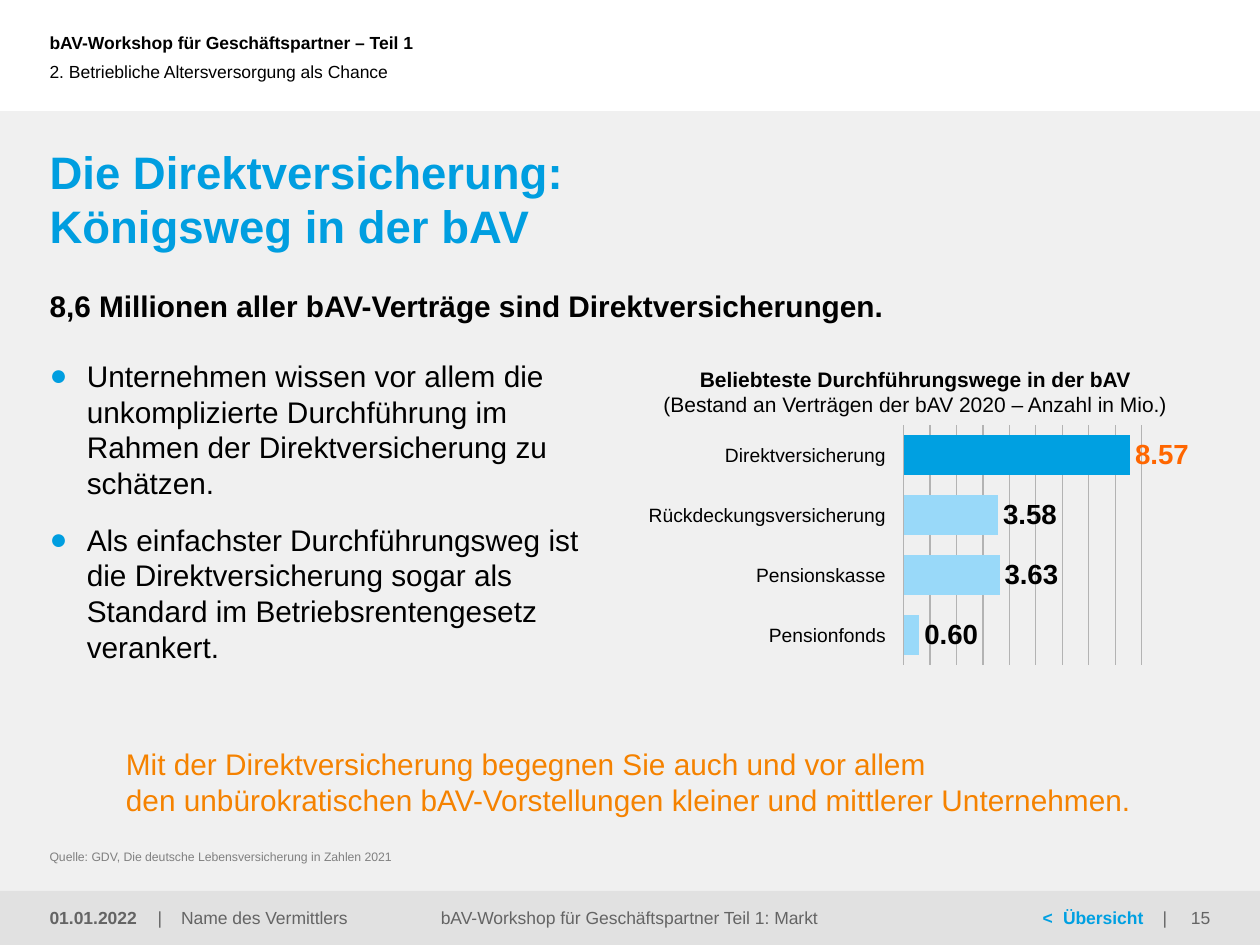
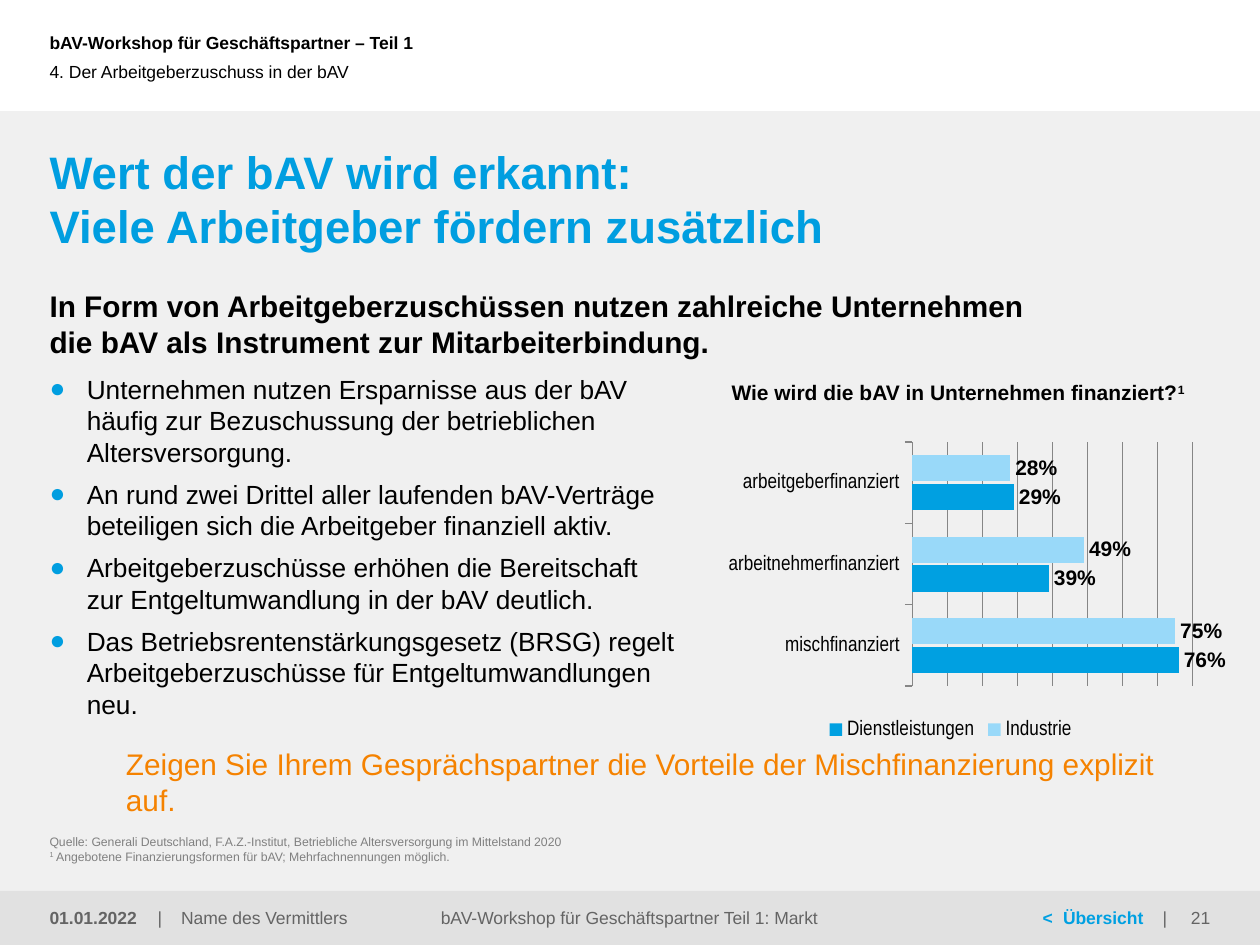
"""Builds two slides of a workshop on occupational pensions, each with bullets and a bar chart."""
from lxml import etree
from pptx import Presentation
from pptx.chart.data import CategoryChartData
from pptx.dml.color import RGBColor
from pptx.enum.chart import XL_CHART_TYPE, XL_LABEL_POSITION, XL_LEGEND_POSITION, XL_TICK_LABEL_POSITION, XL_TICK_MARK
from pptx.enum.shapes import MSO_SHAPE
from pptx.enum.text import MSO_ANCHOR, PP_ALIGN
from pptx.oxml.ns import qn
from pptx.util import Cm, Pt

BLACK = RGBColor(0x00, 0x00, 0x00)
TITLE_BLUE = RGBColor(0x00, 0x9E, 0xE0)
BLUE = RGBColor(0x00, 0xA0, 0xE1)
LIGHT_BLUE = RGBColor(0x99, 0xD9, 0xF9)
ORANGE = RGBColor(0xF5, 0x82, 0x00)
LABEL_ORANGE = RGBColor(0xFF, 0x66, 0x00)
BODY_GREY = RGBColor(0xF0, 0xF0, 0xF0)
FOOTER_GREY = RGBColor(0xE1, 0xE1, 0xE1)
TEXT_GREY = RGBColor(0x64, 0x64, 0x64)
SOURCE_GREY = RGBColor(0x80, 0x80, 0x80)
GRID_GREY = RGBColor(0xB3, 0xB3, 0xB3)
AXIS_GREY = RGBColor(0x86, 0x86, 0x86)

WIDTH, HEIGHT = 25.4, 19.05
MARGIN, CONTENT_W = 1, 23.4
BODY_TOP, FOOTER_TOP = 2.24, 17.96
FOOTER_H = HEIGHT - FOOTER_TOP

WORKSHOP = "bAV-Workshop für Geschäftspartner – Teil 1"
FOOTER = [
    ("01.01.2022", MARGIN, 2.5, {"bold": True}),
    ("|", 3.18, 0.4, {}),
    ("Name des Vermittlers", 3.65, 4, {}),
    ("bAV-Workshop für Geschäftspartner Teil 1: Markt", 7.67, 10.03, {"align": PP_ALIGN.CENTER}),
    ("<", 21.02, 0.4, {"bold": True, "color": BLUE}),
    ("Übersicht", 21.43, 2, {"bold": True, "color": BLUE}),
    ("|", 23.44, 0.4, {}),
]

SLIDES = [
    {
        "section": "2. Betriebliche Altersversorgung als Chance",
        "title": "Die Direktversicherung:\nKönigsweg in der bAV",
        "lead": "8,6 Millionen aller bAV-Verträge sind Direktversicherungen.",
        "bullets": [
            "Unternehmen wissen vor allem die unkomplizierte Durchführung im Rahmen der "
            "Direktversicherung zu schätzen.",
            "Als einfachster Durchführungsweg ist die Direktversicherung sogar als Standard im "
            "Betriebsrentengesetz verankert.",
        ],
        "bullet_box": (MARGIN, 7.21, 11.2, 7.6),
        "bullet_format": {"size": 17, "gap": 12},
        "callout": "Mit der Direktversicherung begegnen Sie auch und vor allem\n"
                   "den unbürokratischen bAV-Vorstellungen kleiner und mittlerer Unternehmen.",
        "source": ["Quelle: GDV, Die deutsche Lebensversicherung in Zahlen 2021"],
        "page": "15",
    },
    {
        "section": "4. Der Arbeitgeberzuschuss in der bAV",
        "title": "Wert der bAV wird erkannt:\nViele Arbeitgeber fördern zusätzlich",
        "lead": "In Form von Arbeitgeberzuschüssen nutzen zahlreiche Unternehmen\n"
                "die bAV als Instrument zur Mitarbeiterbindung.",
        "bullets": [
            "Unternehmen nutzen Ersparnisse aus der bAV häufig zur Bezuschussung der betrieblichen "
            "Altersversorgung.",
            "An rund zwei Drittel aller laufenden bAV-Verträge beteiligen sich die Arbeitgeber "
            "finanziell aktiv.",
            "Arbeitgeberzuschüsse erhöhen die Bereitschaft zur Entgeltumwandlung in der bAV deutlich.",
            "Das Betriebsrentenstärkungsgesetz (BRSG) regelt Arbeitgeberzuschüsse für "
            "Entgeltumwandlungen neu.",
        ],
        "bullet_box": (MARGIN, 7.52, 12.75, 7.3),
        "bullet_format": {"size": 15, "gap": 6},
        "callout": "Zeigen Sie Ihrem Gesprächspartner die Vorteile der Mischfinanzierung explizit auf.",
        "source": [
            "Quelle: Generali Deutschland, F.A.Z.-Institut, Betriebliche Altersversorgung im "
            "Mittelstand 2020\n",
            ("1", {"raised": True}),
            " Angebotene Finanzierungsformen für bAV; Mehrfachnennungen möglich.",
        ],
        "page": "21",
    },
]

CONTRACTS = {"Direktversicherung": 8.57, "Rückdeckungsversicherung": 3.58,
             "Pensionskasse": 3.63, "Pensionfonds": 0.60}
FINANCING = ["arbeitgeberfinanziert", "arbeitnehmerfinanziert", "mischfinanziert"]
SECTORS = [("Industrie", (0.28, 0.49, 0.75), LIGHT_BLUE),
           ("Dienstleistungen", (0.29, 0.39, 0.76), BLUE)]


def set_font(font, size, color=BLACK, bold=False, name="Arial"):
    font.name, font.size, font.bold = name, Pt(size), bold
    font.color.rgb = color


def add_text(slide, text, box, size=10, color=BLACK, bold=False, align=PP_ALIGN.LEFT,
             anchor=MSO_ANCHOR.TOP, bullet=False, gap=0, spacing=None):
    """Adds a text box; a list within text is one paragraph of runs, each a string or (string, format)."""
    tf = slide.shapes.add_textbox(*map(Cm, box)).text_frame
    tf.word_wrap, tf.vertical_anchor = True, anchor
    tf.margin_left = tf.margin_right = tf.margin_top = tf.margin_bottom = 0
    for i, runs in enumerate(text if isinstance(text, list) else [text]):
        p = tf.add_paragraph() if i else tf.paragraphs[0]
        p.alignment = align
        p.space_before = Pt(gap if i else 0)
        if spacing:
            p.line_spacing = spacing
        if bullet:
            add_bullet(p)
        for run in runs if isinstance(runs, list) else [runs]:
            content, extra = run if isinstance(run, tuple) else (run, {})
            extra = {"bold": bold, **extra}
            raised = extra.pop("raised", False)
            for j, line in enumerate(content.split("\n")):
                if j:
                    p.add_line_break()
                if line:
                    r = p.add_run()
                    r.text = line
                    set_font(r.font, size, color, **extra)
                    if raised:
                        r._r.get_or_add_rPr().set("baseline", "30000")


def add_bullet(p):
    pPr = p._p.get_or_add_pPr()
    pPr.set("marL", str(Cm(0.75)))
    pPr.set("indent", str(-Cm(0.75)))
    color = etree.SubElement(etree.SubElement(pPr, qn("a:buClr")), qn("a:srgbClr"))
    color.set("val", str(TITLE_BLUE))
    etree.SubElement(pPr, qn("a:buFont")).set("typeface", "Arial")
    etree.SubElement(pPr, qn("a:buChar")).set("char", "●")


def add_band(slide, top, color):
    sp = slide.shapes.add_shape(MSO_SHAPE.RECTANGLE, 0, Cm(top), Cm(WIDTH), Cm(HEIGHT - top))
    sp.shadow.inherit = False
    sp.fill.solid()
    sp.fill.fore_color.rgb = color
    sp.line.fill.background()


def add_frame(slide, content):
    middle = MSO_ANCHOR.MIDDLE
    add_band(slide, BODY_TOP, BODY_GREY)
    add_band(slide, FOOTER_TOP, FOOTER_GREY)
    add_text(slide, WORKSHOP, (MARGIN, 0, 16.7, 1.7), bold=True, anchor=middle)
    add_text(slide, content["section"], (MARGIN, 0.64, 17.1, 1.6), anchor=middle)
    page = (content["page"], 23.4, 1, {"align": PP_ALIGN.RIGHT})
    for text, left, width, fmt in FOOTER + [page]:
        add_text(slide, text, (left, FOOTER_TOP, width, FOOTER_H),
                 **{"color": TEXT_GREY, "anchor": middle, **fmt})
    add_text(slide, content["title"], (MARGIN, 2.9, CONTENT_W, 1.4), size=26, color=TITLE_BLUE, bold=True)
    add_text(slide, content["lead"], (MARGIN, 5.8, CONTENT_W, 0.74), size=17, bold=True)
    add_text(slide, content["bullets"], content["bullet_box"], bullet=True, **content["bullet_format"])
    add_text(slide, content["callout"], (2.54, 14.99, 21.87, 1.53), size=17, color=ORANGE, anchor=middle)
    add_text(slide, [content["source"]], (MARGIN, 17.12, CONTENT_W, 0.3), size=7, color=SOURCE_GREY,
             anchor=MSO_ANCHOR.BOTTOM)


def set_plot_area(chart, **layout):
    area = chart._chartSpace.chart.plotArea
    for old in area.findall(qn("c:layout")):
        area.remove(old)
    node = etree.Element(qn("c:layout"))
    area.insert(0, node)
    manual = etree.SubElement(node, qn("c:manualLayout"))
    values = {"layoutTarget": "inner", "xMode": "edge", "yMode": "edge", **layout}
    for tag, value in values.items():
        etree.SubElement(manual, qn("c:" + tag)).set("val", str(value))


def add_bars(slide, box, cats, series, fmt, top, step, grid, gap, overlap, label_size, layout):
    data = CategoryChartData(number_format=fmt)
    data.categories = cats
    for name, values, _ in series:
        data.add_series(name, values)
    chart = slide.shapes.add_chart(XL_CHART_TYPE.BAR_CLUSTERED, *map(Cm, box), data).chart
    chart.has_title = chart.has_legend = False
    set_font(chart.font, 11.9, name="Arial Narrow")
    axis = chart.value_axis
    axis.minimum_scale, axis.maximum_scale, axis.major_unit = 0, top, step
    axis.visible = False
    axis.has_major_gridlines = True
    axis.major_gridlines.format.line.color.rgb = grid
    axis.major_gridlines.format.line.width = Pt(0.75)
    chart.category_axis.reverse_order = True
    plot = chart.plots[0]
    plot.gap_width, plot.overlap, plot.vary_by_categories = gap, overlap, False
    for s, (_, _, color) in zip(plot.series, series):
        s.format.fill.solid()
        s.format.fill.fore_color.rgb = color
        labels = s.data_labels
        labels.show_value = True
        labels.number_format, labels.number_format_is_linked = fmt, False
        labels.position = XL_LABEL_POSITION.OUTSIDE_END
        set_font(labels.font, label_size, bold=True)
    set_plot_area(chart, **layout)
    return chart


def add_contracts_chart(slide):
    chart = add_bars(slide, (12.6, 7.21, 11.51, 6.2), list(CONTRACTS),
                     [("Verträge", list(CONTRACTS.values()), LIGHT_BLUE)], "0.00", 9, 1, GRID_GREY,
                     50, 0, 15.8, {"x": 0.488, "y": 0.22, "w": 0.417, "h": 0.779})
    chart.category_axis.visible = False
    point = chart.plots[0].series[0].points[0]
    point.format.fill.solid()
    point.format.fill.fore_color.rgb = BLUE
    set_font(point.data_label.font, 15.8, LABEL_ORANGE, bold=True)
    point.data_label.position = XL_LABEL_POSITION.OUTSIDE_END
    heading = [[("Beliebteste Durchführungswege in der bAV", {"bold": True})],
               "(Bestand an Verträgen der bAV 2020 – Anzahl in Mio.)"]
    add_text(slide, heading, (13.08, 7.39, 10.75, 1.02), size=12, align=PP_ALIGN.CENTER)
    for i, name in enumerate(CONTRACTS):
        add_text(slide, name, (12.7, 8.79 + 1.21 * i, 5.16, 0.74), size=11, align=PP_ALIGN.RIGHT,
                 anchor=MSO_ANCHOR.MIDDLE)


def add_financing_chart(slide):
    chart = add_bars(slide, (13.21, 7.52, 11.91, 7.49), FINANCING, SECTORS, "0%", 0.8, 0.1, AXIS_GREY,
                     100, -10, 12, {"x": 0.435, "y": 0.186, "w": 0.475, "h": 0.657})
    axis = chart.category_axis
    axis.major_tick_mark = XL_TICK_MARK.OUTSIDE
    axis.tick_label_position = XL_TICK_LABEL_POSITION.NEXT_TO_AXIS
    axis.format.line.color.rgb = AXIS_GREY
    chart.has_legend = True
    chart.legend.position = XL_LEGEND_POSITION.BOTTOM
    chart.legend.include_in_layout = False
    set_font(chart.legend.font, 11.9, name="Arial Narrow")
    heading = [["Wie wird die bAV in Unternehmen finanziert?", ("1", {"raised": True})]]
    add_text(slide, heading, (14.3, 7.65, 10.03, 0.51), size=12, bold=True, align=PP_ALIGN.CENTER)


def main():
    prs = Presentation()
    prs.slide_width, prs.slide_height = Cm(WIDTH), Cm(HEIGHT)
    for content, add_chart in zip(SLIDES, (add_contracts_chart, add_financing_chart)):
        slide = prs.slides.add_slide(prs.slide_layouts[6])
        add_frame(slide, content)
        add_chart(slide)
    prs.save("out.pptx")


if __name__ == "__main__":
    main()
